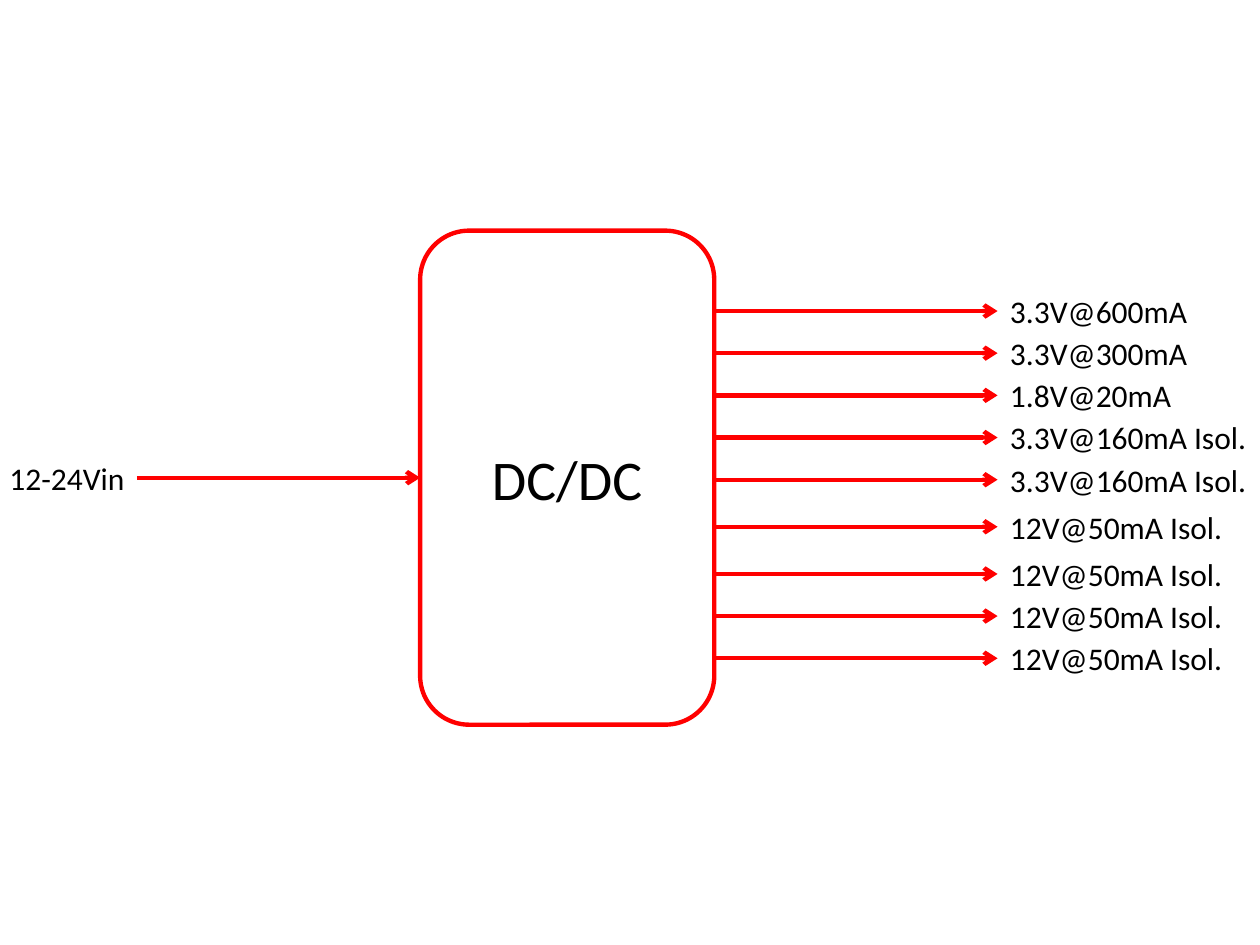
from itertools import accumulate

from lxml import etree
from pptx import Presentation
from pptx.dml.color import RGBColor
from pptx.enum.shapes import MSO_CONNECTOR, MSO_SHAPE
from pptx.enum.text import MSO_ANCHOR, MSO_AUTO_SIZE, PP_ALIGN
from pptx.oxml.ns import qn
from pptx.util import Cm, Pt

ROUNDED = MSO_SHAPE.ROUNDED_RECTANGLE
STRAIGHT = MSO_CONNECTOR.STRAIGHT
MIDDLE = MSO_ANCHOR.MIDDLE
GROW = MSO_AUTO_SIZE.SHAPE_TO_FIT_TEXT
LEFT, CENTER, RIGHT = PP_ALIGN.LEFT, PP_ALIGN.CENTER, PP_ALIGN.RIGHT

LEFT_SIDE = 1
ARROW_LENGTH = 5.71
LABEL_HEIGHT = 1.02
CONVERTER = {"left": 8.47, "top": 4.65, "width": 5.93, "height": 9.96}
FIRST_OUTPUT = 6.27
NARROW_GAP, WIDE_GAP = 0.85, 0.95
# Each output: label, label width, gap to the output above
OUTPUTS = [
    ("3.3V@600mA", 4.45, 0),
    ("3.3V@300mA", 4.45, NARROW_GAP),
    ("1.8V@20mA", 4.45, NARROW_GAP),
    ("3.3V@160mA Isol.", 5.5, NARROW_GAP),
    ("3.3V@160mA Isol.", 5.5, NARROW_GAP),
    ("12V@50mA Isol.", 5.5, WIDE_GAP),
    ("12V@50mA Isol.", 5.5, WIDE_GAP),
    ("12V@50mA Isol.", 5.5, NARROW_GAP),
    ("12V@50mA Isol.", 5.5, NARROW_GAP),
]


def color(hex_string):
    return RGBColor.from_string(hex_string)


class PowerDiagram:
    """Holds the style and the slide on which the diagram is drawn."""

    line_color = "FF0000"
    line_width = 2.5
    text_color = "000000"
    font_name = "Calibri"

    def __init__(self, slide):
        self.slide = slide

    def style_line(self, line):
        line.color.rgb = color(self.line_color)
        line.width = Pt(self.line_width)

    def set_text(self, shape, text, size, alignment):
        paragraph = shape.text_frame.paragraphs[0]
        paragraph.text = text
        paragraph.alignment = alignment
        font = paragraph.runs[0].font
        for name, value in {"name": self.font_name, "size": Pt(size)}.items():
            setattr(font, name, value)
        font.color.rgb = color(self.text_color)

    def block(self, text, left, top, width, height):
        shape = self.slide.shapes.add_shape(
            ROUNDED, Cm(left), Cm(top), Cm(width), Cm(height))
        shape.shadow.inherit = False
        shape.fill.background()
        self.style_line(shape.line)
        shape.text_frame.vertical_anchor = MIDDLE
        self.set_text(shape, text, 32, CENTER)
        return shape

    def arrow(self, left, y):
        connector = self.slide.shapes.add_connector(
            STRAIGHT, Cm(left), Cm(y), Cm(left + ARROW_LENGTH), Cm(y))
        self.style_line(connector.line)
        properties = connector._element.spPr
        line = properties.find(qn("a:ln"))
        etree.SubElement(line, qn("a:tailEnd"), type="arrow")
        etree.SubElement(properties, qn("a:effectLst"))
        return connector

    def label(self, text, left, y, width, alignment=LEFT):
        """Adds a text box centred vertically on y."""
        shape = self.slide.shapes.add_textbox(
            Cm(left), Cm(y - LABEL_HEIGHT / 2), Cm(width), Cm(LABEL_HEIGHT))
        for name, value in {"word_wrap": True, "auto_size": GROW}.items():
            setattr(shape.text_frame, name, value)
        self.set_text(shape, text, 18, alignment)


def main():
    presentation = Presentation()
    presentation.slide_width = Cm(25.4)
    presentation.slide_height = Cm(19.05)
    blank = presentation.slide_layouts[6]
    diagram = PowerDiagram(presentation.slides.add_slide(blank))

    converter = diagram.block("DC/DC", **CONVERTER)

    input_left = CONVERTER["left"] - ARROW_LENGTH
    input_y = CONVERTER["top"] + CONVERTER["height"] / 2
    diagram.arrow(input_left, input_y).end_connect(converter, LEFT_SIDE)
    label_width = 3.18
    diagram.label("12-24Vin", input_left - label_width, input_y, label_width, RIGHT)

    output_left = CONVERTER["left"] + CONVERTER["width"]
    offsets = accumulate(gap for _, _, gap in OUTPUTS)
    for (text, width, _), offset in zip(OUTPUTS, offsets):
        y = FIRST_OUTPUT + offset
        diagram.arrow(output_left, y)
        diagram.label(text, output_left + ARROW_LENGTH, y, width)

    presentation.save("out.pptx")


if __name__ == "__main__":
    main()
